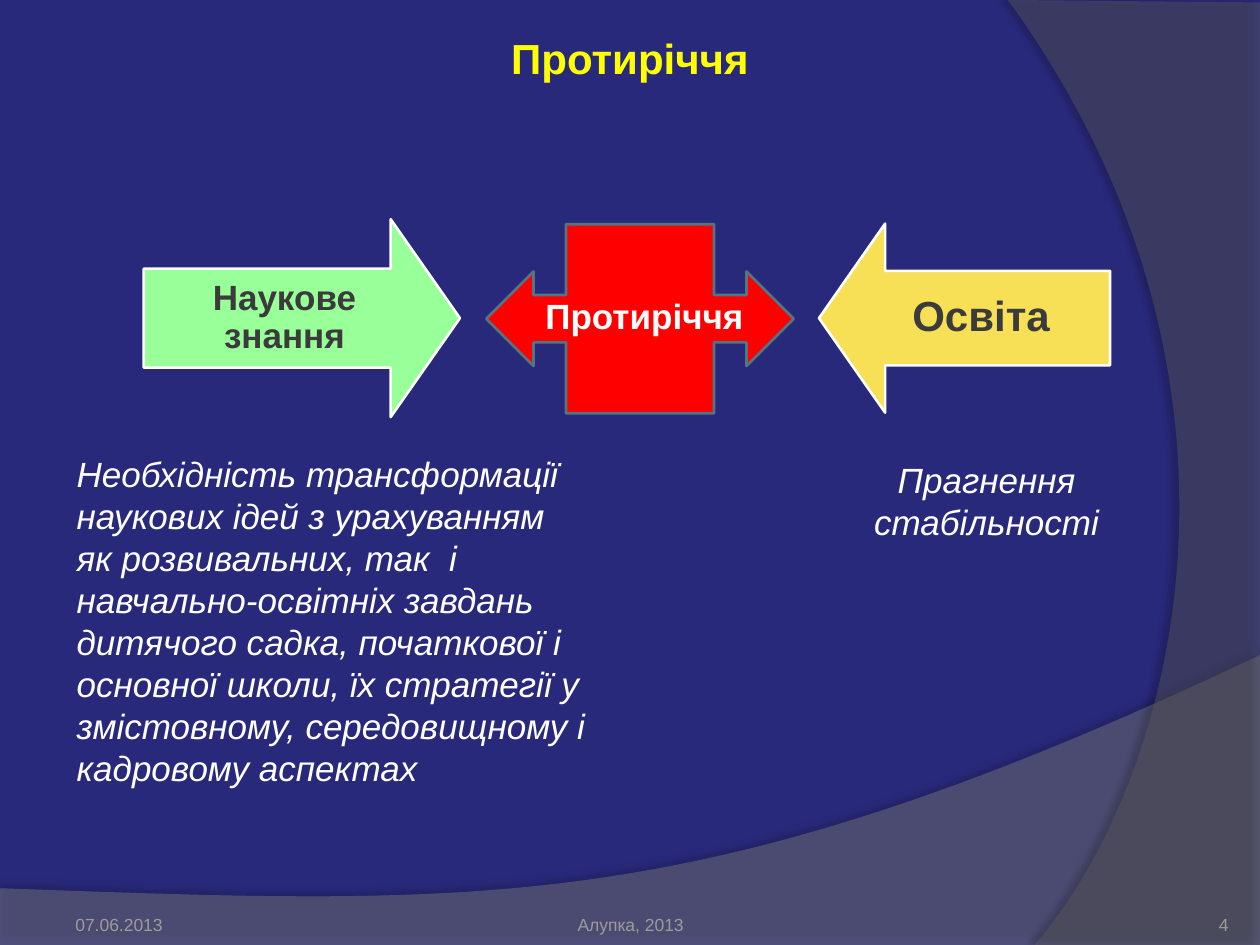
"""Builds the slide on the contradiction between scientific knowledge and education."""
from lxml.etree import SubElement
from pptx import Presentation
from pptx.dml.color import RGBColor
from pptx.enum.shapes import MSO_SHAPE
from pptx.enum.text import MSO_ANCHOR, MSO_AUTO_SIZE, PP_ALIGN
from pptx.oxml.ns import qn
from pptx.util import Inches, Pt

COLUMNS, ROWS = 40, 30
CELL = Inches(0.25)
TOP, MIDDLE, BOTTOM = MSO_ANCHOR.TOP, MSO_ANCHOR.MIDDLE, MSO_ANCHOR.BOTTOM
LEFT, CENTER, RIGHT = PP_ALIGN.LEFT, PP_ALIGN.CENTER, PP_ALIGN.RIGHT


def cells(*lengths):
    """Turn grid lengths into slide lengths."""
    return [round(length * CELL) for length in lengths]


def rgb(value):
    """Turn a hex string into a colour."""
    return RGBColor.from_string(value)


def write(frame, text, size=20, color="FFFFFF", bold=False, italic=False, align=CENTER,
          anchor=TOP, insets=(0.1, 0.05, 0.1, 0.05), spacing=None):
    """Fill a text frame with one formatted paragraph."""
    frame.word_wrap = True
    frame.auto_size = MSO_AUTO_SIZE.NONE
    frame.vertical_anchor = anchor
    (frame.margin_left, frame.margin_top,
     frame.margin_right, frame.margin_bottom) = map(Inches, insets)
    paragraph = frame.paragraphs[0]
    paragraph.alignment = align
    paragraph.line_spacing = spacing
    run = paragraph.add_run()
    run.text = text
    font = run.font
    font.name, font.size, font.bold, font.italic = "Arial", Pt(size), bold, italic
    font.color.rgb = rgb(color)


def curve(start, first, second, end, steps=48):
    """Give the points of a cubic curve."""
    return [
        tuple((1 - t) ** 3 * a + 3 * (1 - t) ** 2 * t * b + 3 * (1 - t) * t ** 2 * c + t ** 3 * d
              for a, b, c, d in zip(start, first, second, end))
        for t in (step / steps for step in range(steps + 1))
    ]


class Deck:
    """Holds the style and the current slide."""

    def __init__(self, background):
        """Start a one-slide presentation."""
        self.presentation = Presentation()
        self.presentation.slide_width, self.presentation.slide_height = cells(COLUMNS, ROWS)
        self.slide = self.presentation.slides.add_slide(self.presentation.slide_layouts[5])
        self.slide.background.fill.solid()
        self.slide.background.fill.fore_color.rgb = rgb(background)

    def title(self, box, text, **style):
        """Place and fill the title."""
        heading = self.slide.shapes.title
        heading.left, heading.top, heading.width, heading.height = cells(*box)
        write(heading.text_frame, text, **style)

    def text(self, box, text, **style):
        """Add a text box."""
        write(self.slide.shapes.add_textbox(*cells(*box)).text_frame, text, **style)

    def arrow(self, kind, box, fill, line, text="", adjustments=(), **style):
        """Add a block arrow with an optional label."""
        arrow = self.slide.shapes.add_shape(kind, *cells(*box))
        arrow.shadow.inherit = False
        arrow.fill.solid()
        arrow.fill.fore_color.rgb = rgb(fill)
        arrow.line.color.rgb = rgb(line)
        arrow.line.width = Pt(1.5)
        for index, value in enumerate(adjustments):
            arrow.adjustments[index] = value
        if text:
            write(arrow.text_frame, text, **style)

    def wave(self, points, fill, opacity, shadow_opacity, blur, distance, direction):
        """Add a translucent outline with a soft shadow."""
        start, *others = [cells(*point) for point in points]
        builder = self.slide.shapes.build_freeform(*start)
        builder.add_line_segments(others)
        wave = builder.convert_to_shape()
        wave.shadow.inherit = False
        wave.fill.solid()
        wave.fill.fore_color.rgb = rgb(fill)
        wave.line.fill.background()
        properties = wave.element.spPr
        color = properties.find(qn("a:solidFill"))[0]
        SubElement(color, qn("a:alpha"), val=str(opacity * 1000))
        shadow = SubElement(properties.find(qn("a:effectLst")), qn("a:outerShdw"),
                            blurRad=str(Pt(blur)), dist=str(Pt(distance)),
                            dir=str(direction * 60000), algn="ctr", rotWithShape="0")
        shade = SubElement(shadow, qn("a:srgbClr"), val="000000")
        SubElement(shade, qn("a:alpha"), val=str(shadow_opacity * 1000))

    def save(self):
        """Save the presentation."""
        self.presentation.save("out.pptx")


def main():
    """Build the slide."""
    deck = Deck("29297B")
    deck.wave([(0, ROWS), (COLUMNS, ROWS),
               *curve((COLUMNS, 20.8), (22.36, 29.16), (15.64, 28.76), (0, 28.2))],
              "7F7F7F", 45, 35, 4, 3.5, 270)
    deck.wave([(COLUMNS, 0.08), (COLUMNS, ROWS),
               *curve((32.84, ROWS), (37.4, 24.76), (40.72, 12), (32, 0))],
              "5E5E5E", 40, 45, 4, 4, 180)

    for text, left, width, align, side in (
        ("07.06.2013", 2, 9.32, LEFT, 0.1),
        ("Алупка, 2013", 13.68, 12.68, CENTER, 0),
        ("4", 35.68, 3.32, RIGHT, 0),
    ):
        deck.text((left, 28.08, width, 1.6), text, size=10, color="9D9B9A", align=align,
                  anchor=BOTTOM, insets=(side, 0.05, side, 0))

    deck.title((7.24, 0.84, 25.52, 2), "Протиріччя", size=24, color="FFFF00", bold=True)

    for kind, box, fill, text, size, inset in (
        (MSO_SHAPE.RIGHT_ARROW, (4.56, 6.96, 10.04, 6.28), "99FF99", "Наукове знання", 20, 0.16),
        (MSO_SHAPE.LEFT_ARROW, (26, 7.1, 9.24, 6), "F7DF56", "Освіта", 24, 0.19),
    ):
        deck.arrow(kind, box, fill, "FFFFFF", text, (0.5, 0.35), size=size, color="3B3B3B",
                   bold=True, anchor=MIDDLE, insets=(inset,) * 4, spacing=0.9)
    deck.arrow(MSO_SHAPE.LEFT_RIGHT_ARROW_CALLOUT, (15.44, 7.12, 9.76, 6), "FF0000", "517682")
    deck.text((16.52, 9.16, 7.88, 1.76), "Протиріччя", bold=True)

    deck.text((2.04, 14.16, 17, 12.4),
              "Необхідність трансформації наукових ідей з урахуванням як розвивальних, так  і "
              "навчально-освітніх завдань дитячого садка, початкової і основної школи, "
              "їх стратегії у змістовному, середовищному і кадровому аспектах",
              italic=True, align=LEFT)
    deck.text((26.76, 14.36, 9.12, 3.08), "Прагнення стабільності", italic=True)
    deck.save()


if __name__ == "__main__":
    main()
